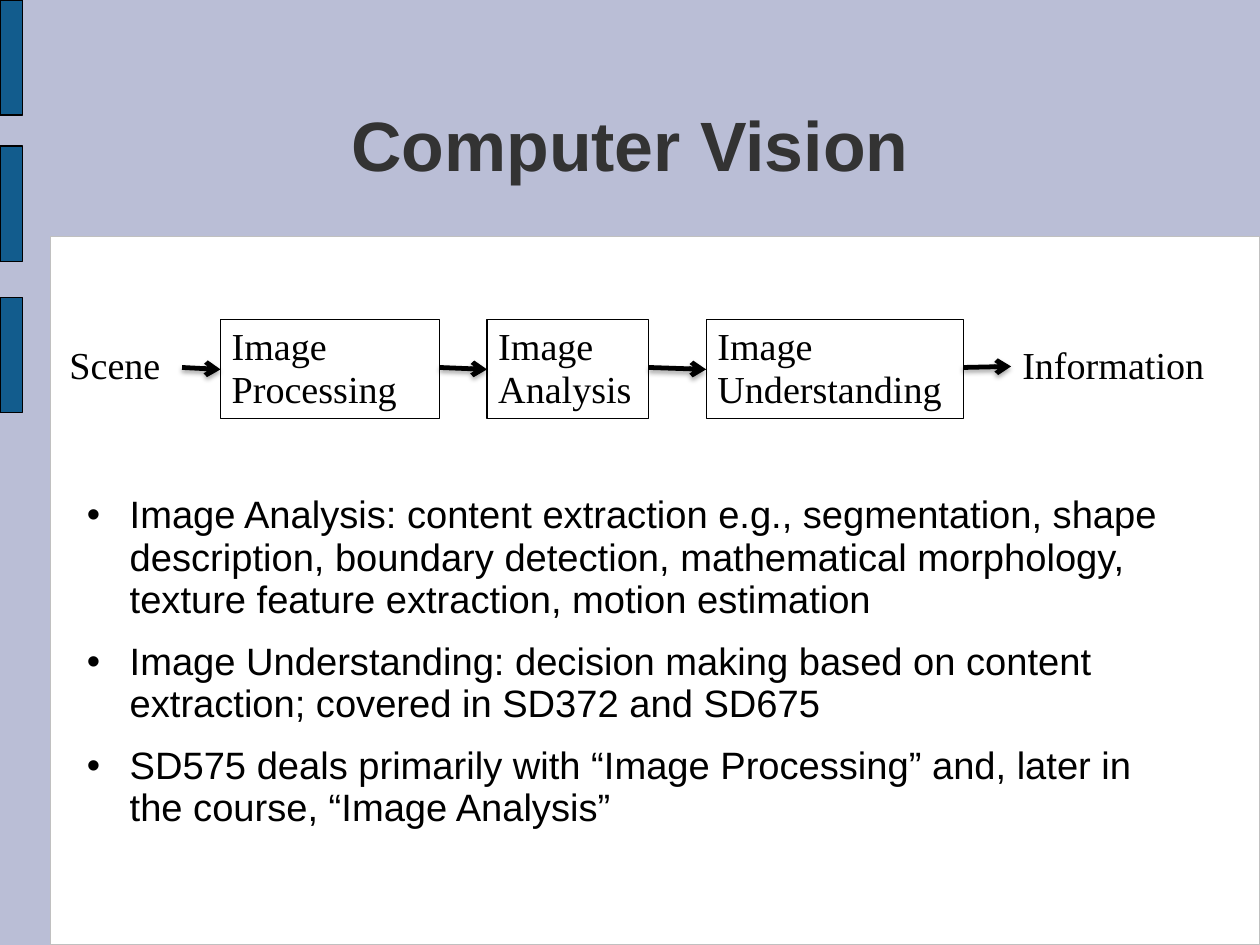
from lxml import etree
from pptx import Presentation
from pptx.dml.color import RGBColor
from pptx.enum.shapes import MSO_CONNECTOR as CONNECTOR, MSO_SHAPE as SHAPE
from pptx.enum.text import MSO_ANCHOR as ANCHOR, MSO_AUTO_SIZE as AUTO_SIZE, PP_ALIGN as ALIGN
from pptx.oxml import parse_xml
from pptx.oxml.ns import nsdecls, qn
from pptx.util import Pt

# Content
TITLE = "Computer Vision"
POINTS = [
    "Image Analysis: content extraction e.g., segmentation, shape description, boundary "
    "detection, mathematical morphology, texture feature extraction, motion estimation",
    "Image Understanding: decision making based on content extraction; "
    "covered in SD372 and SD675",
    "SD575 deals primarily with “Image Processing” and, later in the course, “Image Analysis”",
]
# Pipeline stages: text, left, width, boxed
STAGES = [
    ("Scene", 36.7, 78, False),
    ("Image Processing", 138.9, 138, True),
    ("Image Analysis", 306.8, 102, True),
    ("Image Understanding", 444.8, 162, True),
    ("Information", 636.9, 138, False),
]

# Format and geometry, in points
COLORS = {"background": "BABED6", "panel": "FFFFFF", "panel_line": "C0C0C0",
          "bar": "125C8D", "title": "333333", "ink": "000000"}
WIDTH, HEIGHT = 793.7, 595.28
PANEL_LEFT, PANEL_TOP = 31.9, 149.2
PANEL = (PANEL_LEFT, PANEL_TOP, WIDTH - PANEL_LEFT, HEIGHT - PANEL_TOP)
BAR_TOPS, BAR_WIDTH, BAR_HEIGHT = (0, 92, 187.2), 14.2, 72.5
TITLE_AREA = (58.3, 43.6, 677.5, 99.2)
BODY_AREA = (54.7, 309.4, 677.5, 239.8)
BOX_TOP, BOX_HEIGHT = 201.5, 62.4
LABEL_TOP, LABEL_HEIGHT = 213.5, 34.6
ARROW_START_Y = 231.5
BULLET_INDENT = Pt(27)


def color(name):
    return RGBColor.from_string(COLORS[name])


def set_all(target, values):
    for name, value in values.items():
        setattr(target, name, value)


def place(shape, left, top, width, height):
    set_all(shape, {"left": Pt(left), "top": Pt(top), "width": Pt(width), "height": Pt(height)})


def outline(shape, line_color, width=0.75):
    shape.line.color.rgb = color(line_color)
    shape.line.width = Pt(width)


def write(shape, texts, font, ink, frame, paragraphs):
    text_frame = shape.text_frame
    text_frame.text = "\n".join(texts)
    set_all(text_frame, {"word_wrap": True, **frame})
    for paragraph in text_frame.paragraphs:
        set_all(paragraph, paragraphs)
        for run in paragraph.runs:
            set_all(run.font, font)
            run.font.color.rgb = color(ink)


presentation = Presentation()
set_all(presentation, {"slide_width": Pt(WIDTH), "slide_height": Pt(HEIGHT)})
slide = presentation.slides.add_slide(presentation.slide_layouts[1])
slide.background.fill.solid()
slide.background.fill.fore_color.rgb = color("background")
title, body = slide.placeholders[0], slide.placeholders[1]

# White panel and side bars, behind the text
decorations = [(PANEL, "panel", "panel_line")]
decorations += [((0, top, BAR_WIDTH, BAR_HEIGHT), "bar", "ink") for top in BAR_TOPS]
for area, fill, line in decorations:
    shape = slide.shapes.add_shape(SHAPE.ROUNDED_RECTANGLE, *map(Pt, area))
    shape.adjustments[0] = 0
    shape.shadow.inherit = False
    shape.fill.solid()
    shape.fill.fore_color.rgb = color(fill)
    outline(shape, line)
    title.element.addprevious(shape.element)

# Title
no_margins = {"margin_left": 0, "margin_right": 0, "margin_top": 0, "margin_bottom": 0}
place(title, *TITLE_AREA)
write(title, [TITLE], {"name": "Arial", "size": Pt(44), "bold": True}, "title",
      {**no_margins, "vertical_anchor": ANCHOR.MIDDLE, "auto_size": AUTO_SIZE.NONE},
      {"alignment": ALIGN.CENTER, "line_spacing": 0.93})

# Bullet list
place(body, *BODY_AREA)
write(body, POINTS, {"name": "Arial", "size": Pt(24)}, "ink",
      {**no_margins, "margin_top": Pt(2.2), "auto_size": AUTO_SIZE.NONE},
      {"line_spacing": 0.93, "space_before": Pt(12)})
for paragraph in body.text_frame.paragraphs:
    properties = paragraph._p.get_or_add_pPr()
    properties.set("marL", str(BULLET_INDENT))
    properties.set("indent", str(-BULLET_INDENT))
    bullet_color = etree.SubElement(properties, qn("a:buClr"))
    etree.SubElement(bullet_color, qn("a:srgbClr"), val=COLORS["ink"])
    etree.SubElement(properties, qn("a:buChar"), char="•")

# Pipeline stages
stages = []
for text, left, width, boxed in STAGES:
    if boxed:
        stage = slide.shapes.add_shape(SHAPE.RECTANGLE, Pt(left), Pt(BOX_TOP),
                                       Pt(width), Pt(BOX_HEIGHT))
        stage.shadow.inherit = False
        stage.fill.background()
        outline(stage, "ink")
    else:
        stage = slide.shapes.add_textbox(Pt(left), Pt(LABEL_TOP), Pt(width), Pt(LABEL_HEIGHT))
    write(stage, [text], {"name": "Times New Roman", "size": Pt(24)}, "ink",
          {"vertical_anchor": ANCHOR.TOP, "auto_size": AUTO_SIZE.SHAPE_TO_FIT_TEXT},
          {"alignment": ALIGN.LEFT, "line_spacing": 0.95})
    stages.append(stage)

# Arrows from each stage to the next, with a soft shadow
SHADOW = (f'<a:effectLst {nsdecls("a")}>'
          f'<a:outerShdw blurRad="{Pt(3.1)}" dist="{Pt(1.8)}" dir="5400000" rotWithShape="0">'
          f'<a:srgbClr val="{COLORS["ink"]}"><a:alpha val="35000"/></a:srgbClr>'
          '</a:outerShdw></a:effectLst>')
for source, target in zip(stages, stages[1:]):
    arrow = slide.shapes.add_connector(
        CONNECTOR.STRAIGHT, source.left + source.width, Pt(ARROW_START_Y),
        target.left, target.top + target.height // 2)
    outline(arrow, "ink", 3)
    etree.SubElement(arrow.line._get_or_add_ln(), qn("a:tailEnd"), type="arrow")
    arrow.element.spPr.append(parse_xml(SHADOW))

presentation.save("out.pptx")
